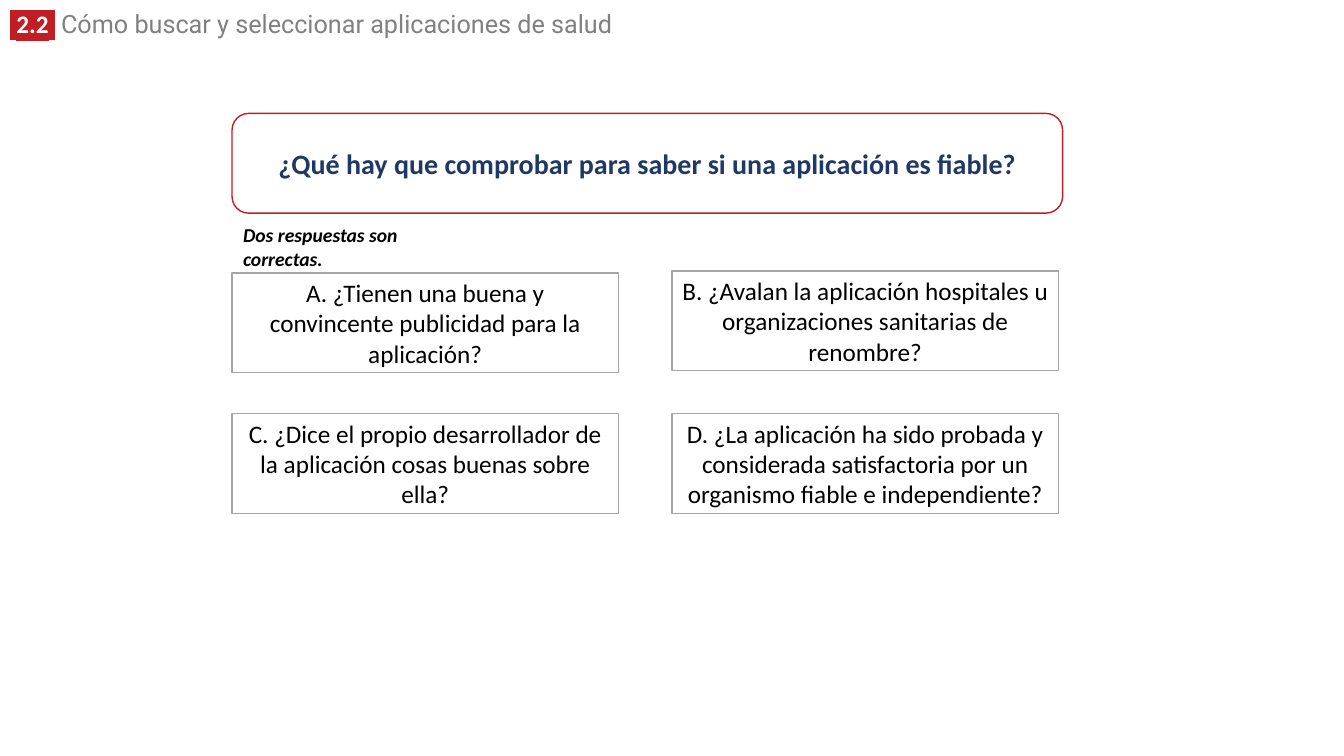
"""Build the quiz slide on checking whether a health application is reliable."""
from lxml import etree
from pptx import Presentation
from pptx.dml.color import RGBColor
from pptx.enum.shapes import MSO_SHAPE
from pptx.enum.text import MSO_ANCHOR, MSO_AUTO_SIZE, PP_ALIGN
from pptx.oxml.ns import qn
from pptx.util import Pt

RECTANGLE, ROUNDED = MSO_SHAPE.RECTANGLE, MSO_SHAPE.ROUNDED_RECTANGLE
TOP, MIDDLE = MSO_ANCHOR.TOP, MSO_ANCHOR.MIDDLE
LEFT, CENTER = PP_ALIGN.LEFT, PP_ALIGN.CENTER
GROW = MSO_AUTO_SIZE.SHAPE_TO_FIT_TEXT

EMU_PER_PX = 9525
TITLE_ONLY = 5
WHITE = RGBColor(0xFF, 0xFF, 0xFF)
BLACK = RGBColor(0, 0, 0)
RED = RGBColor(0xC0, 0x1E, 0x24)
NAVY = RGBColor(0x20, 0x38, 0x64)
GRAY = RGBColor(0x80, 0x80, 0x80)
BORDER = RGBColor(0xA5, 0xA5, 0xA5)

COLUMN_LEFT, COLUMN_STEP = 221, 419
OPTION_WIDTH, BOX_HEIGHT = 368, 95
OPTIONS = [
    (0, 260, "A. ¿Tienen una buena y convincente publicidad para la aplicación?"),
    (1, 258, "B. ¿Avalan la aplicación hospitales u organizaciones sanitarias de renombre?"),
    (0, 394, "C. ¿Dice el propio desarrollador de la aplicación cosas buenas sobre ella?"),
    (1, 394, "D. ¿La aplicación ha sido probada y considerada satisfactoria "
             "por un organismo fiable e independiente?"),
]


def px(*lengths):
    return [length * EMU_PER_PX for length in lengths]


class QuizSlide:
    def __init__(self, presentation):
        self.body_font, self.title_font = "Calibri", "Roboto"
        self.slide = presentation.slides.add_slide(presentation.slide_layouts[TITLE_ONLY])

    def run(self, paragraph, text, size, color, bold=False, italic=False,
            font=None, highlight=None):
        run = paragraph.add_run()
        run.text = text
        run.font.size = Pt(size)
        run.font.bold = bold
        run.font.italic = italic
        run.font.color.rgb = color
        run.font.name = font or self.body_font
        if highlight is not None:
            mark = etree.Element(qn("a:highlight"))
            etree.SubElement(mark, qn("a:srgbClr"), val=str(highlight))
            run.font._element.find(qn("a:solidFill")).addnext(mark)

    def title(self, number, text, left, top, width, height):
        title = self.slide.shapes.title
        title.left, title.top, title.width, title.height = px(left, top, width, height)
        frame = title.text_frame
        frame.word_wrap = True
        frame.auto_size = GROW
        frame.vertical_anchor = TOP
        paragraph = frame.paragraphs[0]
        paragraph.alignment = LEFT
        paragraph.line_spacing = 0.8
        for part, font in ((" ", self.title_font), (number, self.body_font),
                           (" ", self.title_font)):
            self.run(paragraph, part, 18, WHITE, bold=True, font=font, highlight=RED)
        self.run(paragraph, " " + text, 18, GRAY, font=self.title_font)

    def box(self, kind, text, left, top, width, border, size, color, bold=False):
        shape = self.slide.shapes.add_shape(kind, *px(left, top, width, BOX_HEIGHT))
        shape.shadow.inherit = False
        shape.fill.solid()
        shape.fill.fore_color.rgb = WHITE
        shape.line.color.rgb = border
        shape.line.width = Pt(1)
        frame = shape.text_frame
        frame.word_wrap = True
        frame.vertical_anchor = MIDDLE
        paragraph = frame.paragraphs[0]
        paragraph.alignment = CENTER
        self.run(paragraph, text, size, color, bold)

    def note(self, text, left, top, width, height):
        frame = self.slide.shapes.add_textbox(*px(left, top, width, height)).text_frame
        frame.word_wrap = True
        self.run(frame.paragraphs[0], text, 14, BLACK, bold=True, italic=True)


def main():
    presentation = Presentation()
    presentation.slide_width, presentation.slide_height = px(1280, 720)
    quiz = QuizSlide(presentation)
    quiz.title("2.2", "Cómo buscar y seleccionar aplicaciones de salud", 0, 9, 914, 34)
    quiz.box(ROUNDED, "¿Qué hay que comprobar para saber si una aplicación es fiable?",
             COLUMN_LEFT, 108, 791, RED, 20, NAVY, bold=True)
    quiz.note("Dos respuestas son correctas.", 222, 208, 215, 33)
    for column, top, text in OPTIONS:
        quiz.box(RECTANGLE, text, COLUMN_LEFT + column * COLUMN_STEP, top,
                 OPTION_WIDTH, BORDER, 18, BLACK)
    presentation.save("out.pptx")


if __name__ == "__main__":
    main()
